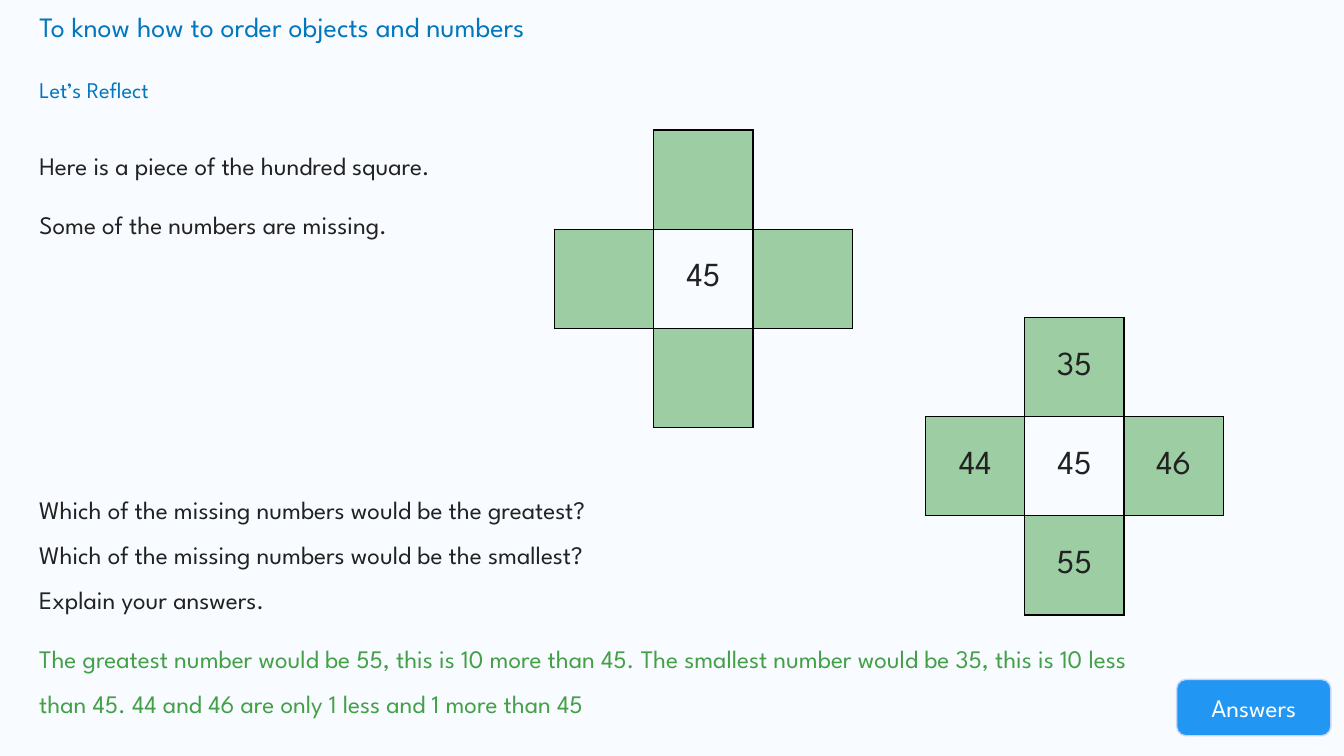
"""Build a lesson slide about ordering the numbers around 45 on the hundred square."""
from dataclasses import dataclass

from lxml.etree import SubElement
from pptx import Presentation
from pptx.dml.color import RGBColor
from pptx.enum.shapes import MSO_SHAPE
from pptx.enum.text import MSO_ANCHOR, MSO_AUTO_SIZE, PP_ALIGN
from pptx.oxml.ns import qn
from pptx.slide import Slide
from pptx.table import _Cell
from pptx.text.text import TextFrame
from pptx.util import Inches, Length, Pt

COLOURS = {
    "background": "F8FBFF",
    "heading": "0277BD",
    "ink": "222222",
    "green": "43A047",
    "button": "2196F3",
    "button_edge": "CCD4F4",
    "white": "FFFFFF",
    "border": "000000",
}
FONT = "League Spartan"
SLIDE_WIDTH, SLIDE_HEIGHT = Inches(13.33), Inches(7.5)
GRID_COLUMNS, GRID_ROWS = 133.3, 75
TEXT_LEFT = 2.9
SQUARE = 9.84
CROSS_SIZE = 3
SIDES = {"lnL": (0, -1), "lnR": (0, 1), "lnT": (-1, 0), "lnB": (1, 0)}


@dataclass(frozen=True)
class Area:
    left: float
    top: float
    width: float
    height: float

    def lengths(self) -> tuple[Length, ...]:
        return (
            across(self.left), down(self.top),
            across(self.width), down(self.height),
        )


@dataclass(frozen=True)
class TextBlock:
    area: Area
    lines: tuple[str, ...]
    colour: str
    size: int = 18
    line_spacing: float = 1.0
    space_before: int = 0
    placeholder: int | None = None


@dataclass(frozen=True)
class NumberCross:
    left: float
    top: float
    numbers: dict[tuple[int, int], str]


TEXT_BLOCKS = (
    TextBlock(Area(TEXT_LEFT, 0.4, 123.4, 4.4),
              ("To know how to order objects and numbers",),
              "heading", size=20, placeholder=0),
    TextBlock(Area(TEXT_LEFT, 7.1, 29.7, 4.6), ("Let’s Reflect",),
              "heading", size=16, placeholder=1),
    TextBlock(Area(TEXT_LEFT, 12.9, 128.4, 12.6),
              ("Here is a piece of the hundred square.",
               "Some of the numbers are missing."),
              "ink", line_spacing=1.5, space_before=10, placeholder=2),
    TextBlock(Area(TEXT_LEFT, 61.8, 111.7, 9.5),
              ("The greatest number would be 55, this is 10 more than 45. "
               "The smallest number would be 35, this is 10 less than 45. "
               "44 and 46 are only 1 less and 1 more than 45",),
              "green", line_spacing=1.5),
    TextBlock(Area(TEXT_LEFT, 47, 87.6, 14.1),
              ("Which of the missing numbers would be the greatest?",
               "Which of the missing numbers would be the smallest?",
               "Explain your answers."),
              "ink", line_spacing=1.5),
)
CROSSES = (
    NumberCross(55, 12.9, {(1, 1): "45"}),
    NumberCross(91.8, 31.5, {(0, 1): "35", (1, 0): "44", (1, 1): "45",
                             (1, 2): "46", (2, 1): "55"}),
)


def across(columns: float) -> Length:
    return Length(round(SLIDE_WIDTH * columns / GRID_COLUMNS))


def down(rows: float) -> Length:
    return Length(round(SLIDE_HEIGHT * rows / GRID_ROWS))


def colour_of(name: str) -> RGBColor:
    return RGBColor.from_string(COLOURS[name])


def write(frame: TextFrame, *lines: str, colour: str, size: int = 18,
          line_spacing: float = 1.0, space_before: int = 0,
          align: PP_ALIGN = PP_ALIGN.LEFT,
          anchor: MSO_ANCHOR = MSO_ANCHOR.TOP) -> None:
    frame.word_wrap = True
    frame.auto_size = MSO_AUTO_SIZE.NONE
    frame.vertical_anchor = anchor
    for index, line in enumerate(lines):
        para = frame.add_paragraph() if index else frame.paragraphs[0]
        properties = para._p.get_or_add_pPr()
        properties.set("marL", "0")
        properties.set("indent", "0")
        SubElement(properties, qn("a:buNone"))
        para.alignment = align
        para.line_spacing = line_spacing
        para.space_before = Pt(space_before if index else 0)
        span = para.add_run()
        span.text = line
        span.font.name = FONT
        span.font.size = Pt(size)
        span.font.color.rgb = colour_of(colour)


def add_text_block(page: Slide, block: TextBlock) -> None:
    if block.placeholder is None:
        box = page.shapes.add_textbox(*block.area.lengths())
    else:
        box = page.placeholders[block.placeholder]
        box.left, box.top, box.width, box.height = block.area.lengths()
    write(box.text_frame, *block.lines, colour=block.colour, size=block.size,
          line_spacing=block.line_spacing, space_before=block.space_before)


def add_button(page: Slide, area: Area, label: str) -> None:
    button = page.shapes.add_shape(MSO_SHAPE.ROUNDED_RECTANGLE, *area.lengths())
    button.shadow.inherit = False
    button.fill.solid()
    button.fill.fore_color.rgb = colour_of("button")
    button.line.color.rgb = colour_of("button_edge")
    button.line.width = Pt(1)
    write(button.text_frame, label, colour="white",
          align=PP_ALIGN.CENTER, anchor=MSO_ANCHOR.MIDDLE)


def in_cross(row: int, column: int) -> bool:
    middle = CROSS_SIZE // 2
    return (0 <= row < CROSS_SIZE and 0 <= column < CROSS_SIZE
            and middle in (row, column))


def draw_borders(cell: _Cell, row: int, column: int) -> None:
    properties = cell._tc.get_or_add_tcPr()
    for side, (row_step, column_step) in SIDES.items():
        border = SubElement(properties, qn(f"a:{side}"), w=str(Pt(1)))
        if in_cross(row, column) or in_cross(row + row_step, column + column_step):
            fill = SubElement(border, qn("a:solidFill"))
            SubElement(fill, qn("a:srgbClr"), val=COLOURS["border"])
        else:
            SubElement(border, qn("a:noFill"))


def fill_cell(cell: _Cell, row: int, column: int) -> None:
    if not in_cross(row, column) or row == column:
        cell.fill.background()
        return
    cell.fill.solid()
    cell.fill.fore_color.rgb = colour_of("green")
    shade = cell._tc.get_or_add_tcPr().find(qn("a:solidFill"))[0]
    SubElement(shade, qn("a:alpha"), val="50000")


def add_cross(page: Slide, cross: NumberCross) -> None:
    side = CROSS_SIZE * SQUARE
    area = Area(cross.left, cross.top, side, side)
    table = page.shapes.add_table(CROSS_SIZE, CROSS_SIZE, *area.lengths()).table
    table.first_row = table.horz_banding = False
    for index in range(CROSS_SIZE ** 2):
        row, column = divmod(index, CROSS_SIZE)
        cell = table.cell(row, column)
        draw_borders(cell, row, column)
        fill_cell(cell, row, column)
        if (row, column) in cross.numbers:
            cell.vertical_anchor = MSO_ANCHOR.MIDDLE
            write(cell.text_frame, cross.numbers[row, column], colour="ink",
                  size=24, align=PP_ALIGN.CENTER)


def main() -> None:
    deck = Presentation()
    deck.slide_width, deck.slide_height = SLIDE_WIDTH, SLIDE_HEIGHT
    page = deck.slides.add_slide(deck.slide_layouts.get_by_name("Two Content"))
    page.background.fill.solid()
    page.background.fill.fore_color.rgb = colour_of("background")
    for block in TEXT_BLOCKS:
        add_text_block(page, block)
    add_button(page, Area(116.7, 67.4, 15.3, 5.6), "Answers")
    for cross in CROSSES:
        add_cross(page, cross)
    deck.save("out.pptx")


if __name__ == "__main__":
    main()
